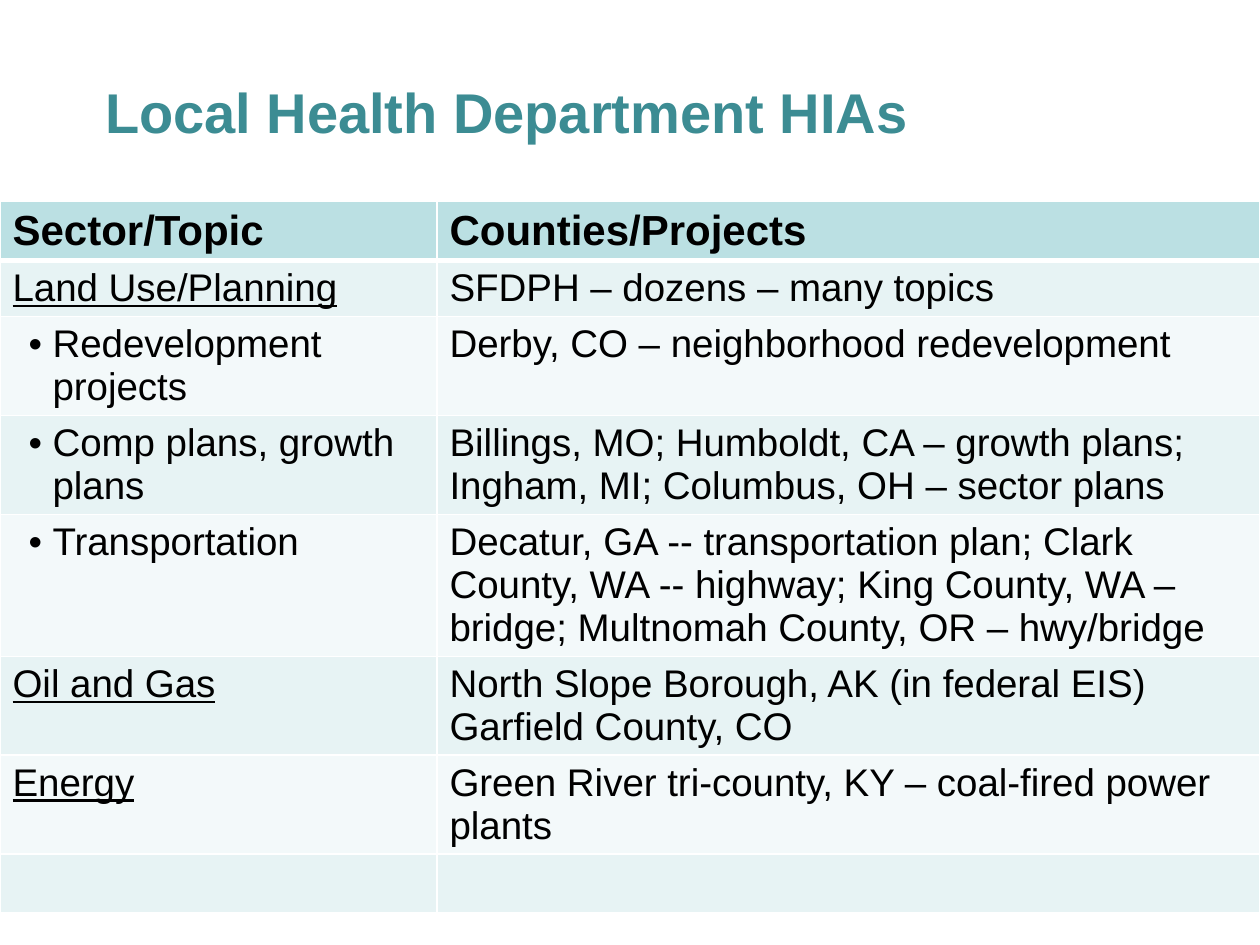
from dataclasses import dataclass

from lxml.etree import SubElement
from pptx import Presentation
from pptx.dml.color import RGBColor
from pptx.enum.text import MSO_ANCHOR, PP_ALIGN
from pptx.oxml.ns import qn
from pptx.util import Pt

# Content: (sector style, sector, projects)
TITLE = "Local Health Department HIAs"
HEADER = ("Sector/Topic", "Counties/Projects")
SECTORS = [
    ("heading", "Land Use/Planning", "SFDPH – dozens – many topics"),
    ("bullet", "Redevelopment projects", "Derby, CO – neighborhood redevelopment"),
    ("bullet", "Comp plans, growth plans",
     "Billings, MO; Humboldt, CA – growth plans; Ingham, MI; Columbus, OH – sector plans"),
    ("bullet", "Transportation",
     "Decatur, GA -- transportation plan; Clark County, WA -- highway; "
     "King County, WA – bridge; Multnomah County, OR – hwy/bridge"),
    ("heading", "Oil and Gas",
     "North Slope Borough, AK (in federal EIS)\nGarfield County, CO"),
    ("heading", "Energy", "Green River tri-county, KY – coal-fired power plants"),
    ("plain", "", ""),
]
COLUMN_WIDTHS = (437, 823)
ROW_HEIGHTS = (59, 56, 99, 99, 142, 98, 99, 59)


@dataclass(frozen=True)
class Theme:
    font: str = "Arial"
    title: str = "3C8C93"
    text: str = "000000"
    header_fill: str = "BBE0E3"
    bands: tuple = ("E7F3F4", "F3F9FA")
    border: str = "FFFFFF"
    title_size: int = 32
    header_size: int = 24
    body_size: int = 22


THEME = Theme()
PX = 914400 // 126


def px(length):
    return length * PX


def style_font(font, size, color, bold=False, underline=False):
    font.name, font.size = THEME.font, Pt(size)
    font.bold, font.underline = bold, underline
    font.color.rgb = RGBColor.from_string(color)


def add_bullet(paragraph):
    properties = paragraph._p.get_or_add_pPr()
    properties.set("marL", str(px(40)))
    properties.set("indent", str(px(-24)))
    SubElement(properties, qn("a:buFont"), typeface=THEME.font)
    SubElement(properties, qn("a:buChar"), char="•")


def add_borders(cell, bottom_width):
    properties = cell._tc.get_or_add_tcPr()
    widths = {"a:lnL": 1, "a:lnR": 1, "a:lnT": 1, "a:lnB": bottom_width}
    for position, (side, width) in enumerate(widths.items()):
        line = SubElement(properties, qn(side), w=str(Pt(width)))
        fill = SubElement(line, qn("a:solidFill"))
        SubElement(fill, qn("a:srgbClr"), val=THEME.border)
        properties.insert(position, line)


def fill_cell(cell, text, fill, style="plain"):
    is_header = style == "header"
    cell.text_frame.text = text
    for paragraph in cell.text_frame.paragraphs:
        if style == "bullet":
            add_bullet(paragraph)
        size = THEME.header_size if is_header else THEME.body_size
        for run in paragraph.runs:
            style_font(run.font, size, THEME.text, is_header, style == "heading")
    cell.fill.solid()
    cell.fill.fore_color.rgb = RGBColor.from_string(fill)
    add_borders(cell, 3 if is_header else 1)


def main():
    deck = Presentation()
    deck.slide_width, deck.slide_height = px(1260), px(945)
    slide = deck.slides.add_slide(deck.slide_layouts[5])

    # Title
    title = slide.shapes.title
    title.left, title.top, title.width, title.height = map(px, (105, 73, 1092, 84))
    frame = title.text_frame
    frame.text = TITLE
    frame.margin_left = frame.margin_right = frame.margin_top = frame.margin_bottom = 0
    frame.vertical_anchor = MSO_ANCHOR.MIDDLE
    heading = frame.paragraphs[0]
    heading.alignment, heading.line_spacing = PP_ALIGN.LEFT, 0.9
    style_font(heading.runs[0].font, THEME.title_size, THEME.title, bold=True)

    # Table grid
    table = slide.shapes.add_table(
        len(ROW_HEIGHTS), len(COLUMN_WIDTHS), 0, px(201),
        px(sum(COLUMN_WIDTHS)), px(sum(ROW_HEIGHTS))).table
    table.first_row = table.horz_banding = False
    for column, width in zip(table.columns, COLUMN_WIDTHS):
        column.width = px(width)
    for row, height in zip(table.rows, ROW_HEIGHTS):
        row.height = px(height)

    # Table text and bands
    for column, label in enumerate(HEADER):
        fill_cell(table.cell(0, column), label, THEME.header_fill, "header")
    for index, (style, sector, projects) in enumerate(SECTORS):
        band = THEME.bands[index % 2]
        fill_cell(table.cell(index + 1, 0), sector, band, style)
        fill_cell(table.cell(index + 1, 1), projects, band)

    deck.save("out.pptx")


if __name__ == "__main__":
    main()
